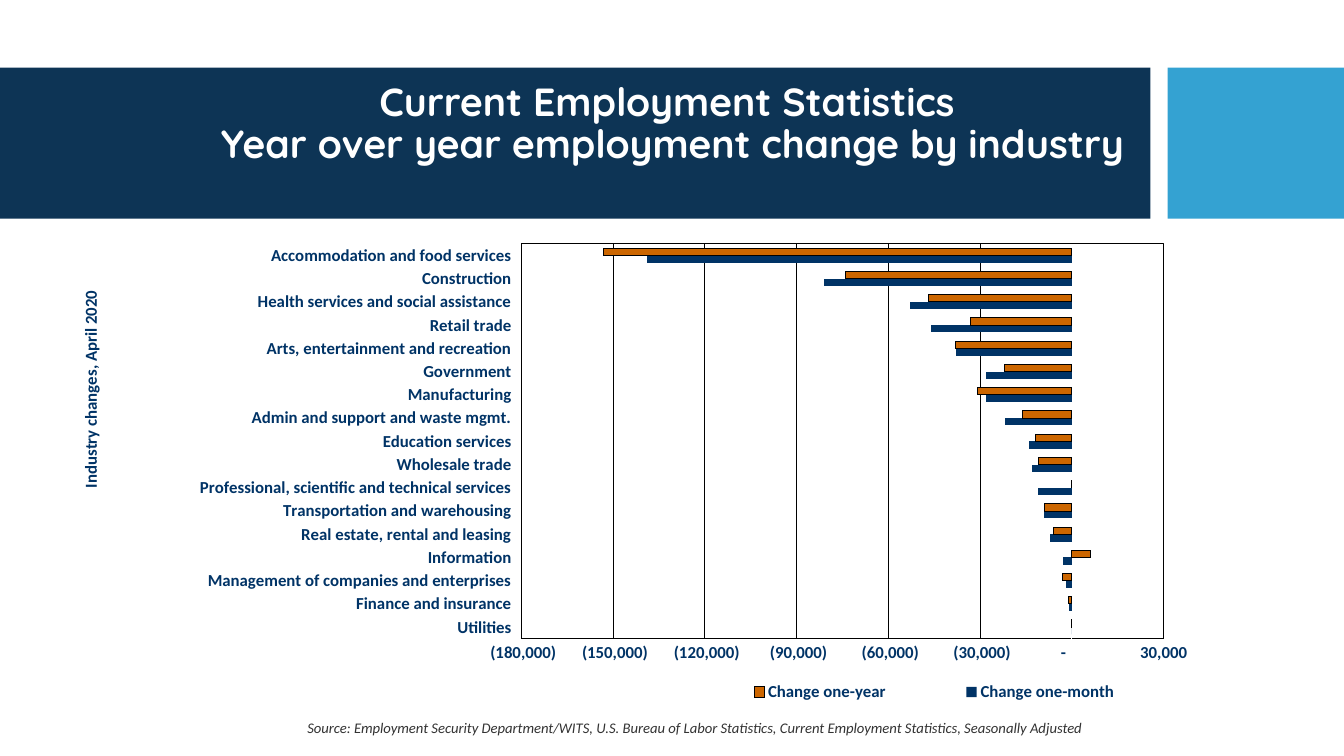
from lxml import etree
from pptx import Presentation
from pptx.chart.data import CategoryChartData
from pptx.dml.color import RGBColor
from pptx.enum.chart import XL_CHART_TYPE, XL_LEGEND_POSITION, XL_TICK_LABEL_POSITION, XL_TICK_MARK
from pptx.enum.shapes import MSO_SHAPE
from pptx.enum.text import MSO_ANCHOR, MSO_AUTO_SIZE, PP_ALIGN
from pptx.oxml import parse_xml
from pptx.oxml.ns import nsdecls, qn
from pptx.util import Inches, Pt

NAVY, SKY, WHITE, BLACK = "0D3455", "34A2D2", "FFFFFF", "000000"
LABEL_BLUE, ORANGE, SOURCE_GREY = "003366", "CC6600", "333333"
LABEL_FORMAT = {"name": "Calibri", "size": Pt(12), "bold": True}

# Industry: (change one-month, change one-year), in thousands, bottom to top
CHANGES = {
    "Utilities": (0, 0),
    "Finance and insurance": (-1, -1),
    "Management of companies and enterprises": (-2, -3),
    "Information": (-3, 6),
    "Real estate, rental and leasing": (-7, -6),
    "Transportation and warehousing": (-9, -9),
    "Professional, scientific and technical services": (-11, 0),
    "Wholesale trade": (-13, -11),
    "Education services": (-14, -12),
    "Admin and support and waste mgmt.": (-22, -16),
    "Manufacturing": (-28, -31),
    "Government": (-28, -22),
    "Arts, entertainment and recreation": (-38, -38),
    "Retail trade": (-46, -33),
    "Health services and social assistance": (-53, -47),
    "Construction": (-81, -74),
    "Accommodation and food services": (-139, -153),
}


def rgb(color):
    return RGBColor.from_string(color)


def format_font(font, color, **values):
    for name, value in values.items():
        setattr(font, name, value)
    font.color.rgb = rgb(color)


def format_line(line, color, width):
    line.color.rgb = rgb(color)
    line.width = Pt(width)


def set_layout(element, after=None, **fractions):
    """Place a chart part by fractions of the chart, after the named child."""
    for old in element.findall(qn("c:layout")):
        element.remove(old)
    layout = parse_xml(f"<c:layout {nsdecls('c')}><c:manualLayout/></c:layout>")
    modes = {"xMode": "edge", "yMode": "edge"}
    if after is None:
        modes = {"layoutTarget": "inner", **modes}
    for tag, value in {**modes, **fractions}.items():
        etree.SubElement(layout[0], qn(f"c:{tag}")).set("val", str(value))
    if after is None:
        element.insert(0, layout)
    else:
        element.find(qn(after)).addnext(layout)


def add_header(slide, left, top, width, height):
    band_width, gap = Inches(11.41), Inches(0.17)
    accent_left = left + band_width + gap
    for x, w, color in ((left, band_width, NAVY),
                        (accent_left, left + width - accent_left, SKY)):
        band = slide.shapes.add_shape(MSO_SHAPE.RECTANGLE, x, top, w, height)
        band.shadow.inherit = False
        band.fill.solid()
        band.fill.fore_color.rgb = rgb(color)
        band.line.fill.background()

    title = slide.shapes.title
    slide.shapes._spTree.append(title._element)  # in front of the bands
    title.left, title.top = left + Inches(1.41), top - Inches(0.04)
    title.width, title.height = Inches(10.52), Inches(1.22)
    frame = title.text_frame
    frame.auto_size = MSO_AUTO_SIZE.NONE
    frame.vertical_anchor = MSO_ANCHOR.MIDDLE
    frame.text = "Current Employment Statistics \vYear over year employment change by industry"
    heading = frame.paragraphs[0]
    heading.alignment = PP_ALIGN.CENTER
    heading.line_spacing = 0.9
    for run in heading.runs:
        format_font(run.font, WHITE, name="Quicksand", size=Pt(28), bold=True)


def format_industry_axis(axis):
    axis.tick_label_position = XL_TICK_LABEL_POSITION.LOW
    format_line(axis.format.line, WHITE, 0.75)
    frame = axis.axis_title.text_frame
    frame.text = "Industry changes, April 2020"
    format_font(frame.paragraphs[0].runs[0].font, LABEL_BLUE, **LABEL_FORMAT)
    body = frame._txBody.find(qn("a:bodyPr"))
    body.set("rot", "-5400000")
    body.set("vert", "horz")
    set_layout(axis.axis_title._element, "c:tx", x=0.01, y=0.11)


def format_change_axis(axis):
    axis.minimum_scale, axis.maximum_scale, axis.major_unit = -180000, 30000, 30000
    axis.has_major_gridlines = True
    format_line(axis.major_gridlines.format.line, BLACK, 0.75)
    axis.format.line.fill.background()
    axis.tick_labels.number_format = r'_(* #,##0_);_(* \(#,##0\);_(* "-"??_);_(@_)'
    axis.tick_labels.number_format_is_linked = False


def add_change_chart(slide, left, top, width, height):
    data = CategoryChartData()
    data.categories = list(CHANGES)
    for name, thousands in zip(("Change one-month", "Change one-year"), zip(*CHANGES.values())):
        data.add_series(name, [value * 1000 for value in thousands])
    chart = slide.shapes.add_chart(
        XL_CHART_TYPE.BAR_CLUSTERED, left, top, width, height, data).chart
    chart.has_title = False
    format_font(chart.font, LABEL_BLUE, **LABEL_FORMAT)

    bars = chart.plots[0]
    bars.vary_by_categories = False
    bars.gap_width, bars.overlap = 122, 0
    for series, color in zip(bars.series, (LABEL_BLUE, ORANGE)):
        series.invert_if_negative = False
        series.format.fill.solid()
        series.format.fill.fore_color.rgb = rgb(color)
    format_line(bars.series[1].format.line, BLACK, 0)

    for axis in (chart.category_axis, chart.value_axis):
        axis.major_tick_mark = axis.minor_tick_mark = XL_TICK_MARK.NONE
        format_font(axis.tick_labels.font, LABEL_BLUE, **LABEL_FORMAT)
    format_industry_axis(chart.category_axis)
    format_change_axis(chart.value_axis)

    plot_area = bars._element.getparent()
    set_layout(plot_area, x=0.394, y=0.019, w=0.554, h=0.825)
    plot_area.append(parse_xml(
        f"<c:spPr {nsdecls('c', 'a')}><a:noFill/><a:ln w='9525'><a:solidFill>"
        f"<a:srgbClr val='{BLACK}'/></a:solidFill></a:ln></c:spPr>"))

    chart.has_legend = True
    chart.legend.position = XL_LEGEND_POSITION.BOTTOM
    chart.legend.include_in_layout = False
    format_font(chart.legend.font, LABEL_BLUE, **LABEL_FORMAT)
    set_layout(chart.legend._element, "c:legendPos", x=0.53, y=0.92, w=0.44, h=0.07)


def add_source(slide, left, top, width, height):
    frame = slide.shapes.add_textbox(left, top, width, height).text_frame
    frame.word_wrap = True
    frame.text = ("Source: Employment Security Department/WITS, U.S. Bureau of Labor Statistics, "
                  "Current Employment Statistics, Seasonally Adjusted")
    format_font(frame.paragraphs[0].runs[0].font, SOURCE_GREY,
                name="Calibri", size=Pt(10.5), italic=True)


def main():
    deck = Presentation()
    deck.slide_width, deck.slide_height = Inches(13.33), Inches(7.5)
    slide = deck.slides.add_slide(deck.slide_layouts[5])
    add_header(slide, 0, Inches(0.67), deck.slide_width, Inches(1.5))
    add_change_chart(slide, Inches(0.64), Inches(2.33), Inches(11.5), Inches(4.75))
    add_source(slide, Inches(2.95), Inches(7.08), Inches(8.56), Inches(0.28))
    deck.save("out.pptx")


if __name__ == "__main__":
    main()
